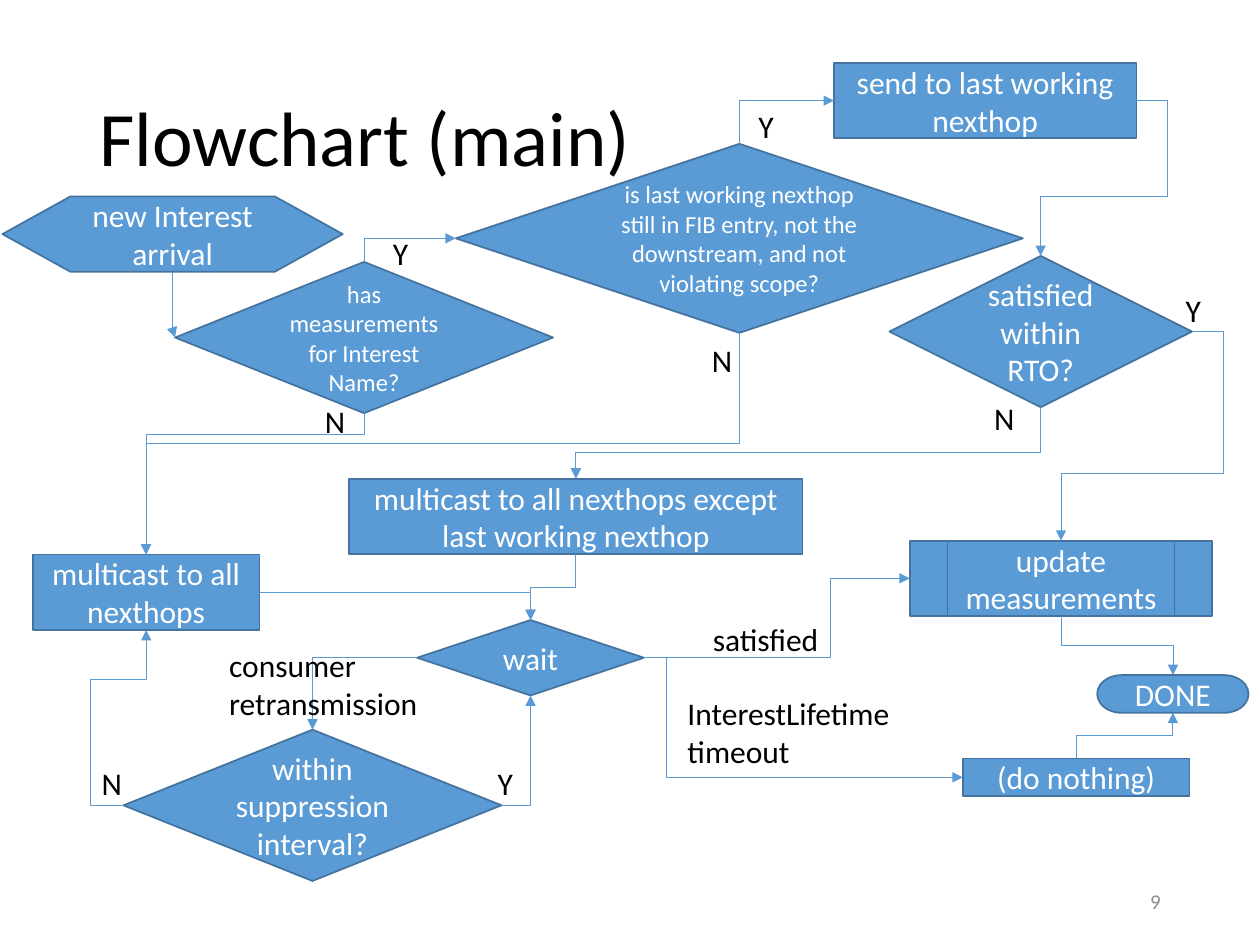
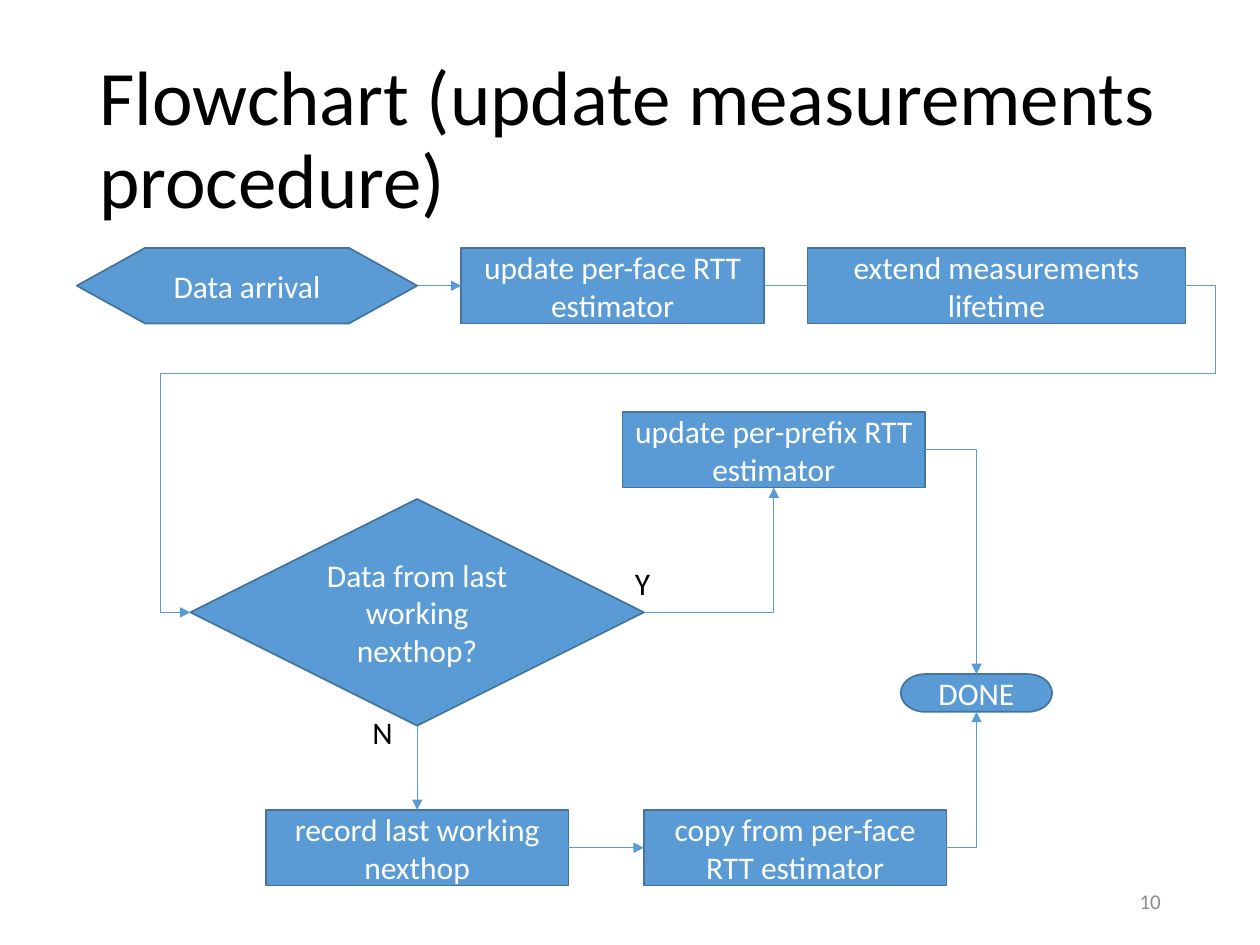
"""Build the two forwarding-strategy flowchart slides."""
from lxml.etree import SubElement
from pptx import Presentation
from pptx.dml.color import RGBColor
from pptx.enum.shapes import MSO_CONNECTOR, MSO_SHAPE
from pptx.enum.text import MSO_ANCHOR, MSO_AUTO_SIZE, PP_ALIGN
from pptx.oxml.ns import qn
from pptx.util import Cm, Pt

COLORS = {
    "node": "5B9BD5",
    "outline": "43739E",
    "node_text": "FFFFFF",
    "text": "000000",
    "page_number": "8C8C8C",
}
FONT = "Calibri"
TOP, LEFT, BOTTOM, RIGHT = range(4)
START = MSO_SHAPE.FLOWCHART_PREPARATION
DECISION = MSO_SHAPE.FLOWCHART_DECISION
PROCESS = MSO_SHAPE.FLOWCHART_PROCESS
PROCEDURE = MSO_SHAPE.FLOWCHART_PREDEFINED_PROCESS
END = MSO_SHAPE.FLOWCHART_TERMINATOR
ANSWER_WIDTHS = {"Y": 0.81, "N": 0.91}


def rgb(name):
    return RGBColor.from_string(COLORS[name])


def write(frame, text, size, color, align=PP_ALIGN.LEFT):
    frame.text = text
    paragraph = frame.paragraphs[0]
    paragraph.alignment = align
    for run in paragraph.runs:
        run.font.name = FONT
        run.font.size = Pt(size)
        run.font.color.rgb = rgb(color)
    return paragraph


def add_flow_slide(prs, title_text, number):
    slide = prs.slides.add_slide(prs.slide_layouts[5])
    title = slide.shapes.title
    title.left, title.top, title.width, title.height = Cm(1.75), Cm(1.02), Cm(21.9), Cm(3.68)
    title.text_frame.vertical_anchor = MSO_ANCHOR.MIDDLE
    title.text_frame.auto_size = MSO_AUTO_SIZE.NONE
    write(title.text_frame, title_text, 44, "text").line_spacing = 0.9

    page = slide.shapes.add_textbox(Cm(17.93), Cm(17.65), Cm(5.72), Cm(1.02))
    page.text_frame.word_wrap = True
    page.text_frame.vertical_anchor = MSO_ANCHOR.MIDDLE
    write(page.text_frame, str(number), 12, "page_number", PP_ALIGN.RIGHT)
    return slide


def add_node(slide, kind, text, left, top, width, height=1.52, size=18):
    node = slide.shapes.add_shape(kind, Cm(left), Cm(top), Cm(width), Cm(height))
    node.shadow.inherit = False
    node.fill.solid()
    node.fill.fore_color.rgb = rgb("node")
    node.line.color.rgb = rgb("outline")
    node.line.width = Pt(1)
    node.text_frame.vertical_anchor = MSO_ANCHOR.MIDDLE
    write(node.text_frame, text, size, "node_text", PP_ALIGN.CENTER)
    return node


def add_label(slide, text, left, top, width=None, wrap=False):
    label = slide.shapes.add_textbox(
        Cm(left), Cm(top), Cm(width or ANSWER_WIDTHS[text]), Cm(1.8 if wrap else 1.02))
    label.text_frame.word_wrap = wrap
    label.text_frame.auto_size = MSO_AUTO_SIZE.SHAPE_TO_FIT_TEXT
    write(label.text_frame, text, 18, "text")


def join(slide, kind, source, source_side, target, target_side, arrow=True):
    link = slide.shapes.add_connector(kind, Cm(0), Cm(0), Cm(1), Cm(1))
    link.begin_connect(source, source_side)
    link.end_connect(target, target_side)
    link.line.color.rgb = rgb("node")
    link.line.width = Pt(0.5)
    properties = link.element.spPr
    if arrow:
        SubElement(properties.find(qn("a:ln")), qn("a:tailEnd"), type="triangle")
    SubElement(properties, qn("a:effectLst"))
    return link


def add_straight(slide, source, source_side, target, target_side, arrow=True):
    join(slide, MSO_CONNECTOR.STRAIGHT, source, source_side, target, target_side, arrow)


def add_elbow(slide, source, source_side, target, target_side, *bends):
    """Join two nodes at right angles, with bends as fractions of the span."""
    link = join(slide, MSO_CONNECTOR.ELBOW, source, source_side, target, target_side)
    x1, y1, x2, y2 = link.begin_x, link.begin_y, link.end_x, link.end_y
    upright = source_side in (TOP, BOTTOM)
    along, across = (y2 - y1, x1 - x2) if upright else (x2 - x1, y2 - y1)
    flip_h, flip_v = along < 0, across < 0
    rotation = 90 if upright else 0
    if source_side == LEFT or (source_side == BOTTOM and x2 > x1):
        rotation += 180
        flip_h, flip_v = not flip_h, not flip_v

    link.width, link.height = abs(along), abs(across)
    link.left = (x1 + x2 - link.width) // 2
    link.top = (y1 + y2 - link.height) // 2
    link.rotation = rotation
    xfrm = link.element.spPr.find(qn("a:xfrm"))
    xfrm.set("flipH", str(int(flip_h)))
    xfrm.set("flipV", str(int(flip_v)))

    geometry = link.element.spPr.find(qn("a:prstGeom"))
    geometry.set("prst", f"bentConnector{len(bends) + 2}")
    guides = geometry.find(qn("a:avLst"))
    for index, bend in enumerate(bends, 1):
        name = "adj" if len(bends) == 1 else f"adj{index}"
        name = "adj1" if len(bends) == 1 else name
        SubElement(guides, qn("a:gd"), name=name, fmla=f"val {round(bend * 100000)}")


def build_main_flow(prs):
    slide = add_flow_slide(prs, "Flowchart (main)", 9)
    interest = add_node(slide, START, "new Interest arrival", 0.05, 3.96, 6.86)
    measured = add_node(slide, DECISION, "has measurements for Interest Name?",
                        3.53, 5.28, 7.62, 3.05, 14)
    multicast = add_node(slide, PROCESS, "multicast to all nexthops", 0.66, 11.18, 4.57)
    send = add_node(slide, PROCESS, "send to last working nexthop", 16.81, 1.27, 6.1)
    in_time = add_node(slide, DECISION, "satisfied within RTO?", 17.93, 5.16, 6.1, 3.05)
    multicast_rest = add_node(slide, PROCESS, "multicast to all nexthops except last working nexthop",
                              7.04, 9.65, 9.14)
    wait = add_node(slide, DECISION, "wait", 8.41, 12.5, 4.57)
    done = add_node(slide, END, "DONE", 22.12, 13.61, 3.05, 0.76)
    suppression = add_node(slide, DECISION, "within suppression interval?", 2.49, 14.71, 7.62, 3.05)
    nothing = add_node(slide, PROCESS, "(do nothing)", 19.41, 15.29, 4.57, 0.76)
    update = add_node(slide, PROCEDURE, "update measurements", 18.34, 10.9, 6.1)
    usable = add_node(
        slide, DECISION,
        "is last working nexthop still in FIB entry, not the downstream, and not violating scope?",
        9.19, 2.9, 11.43, 3.81, 14)

    for route in (
        (interest, BOTTOM, measured, LEFT),
        (measured, TOP, usable, LEFT),
        (measured, BOTTOM, multicast, TOP, 0.15),
        (usable, TOP, send, LEFT),
        (usable, BOTTOM, multicast, TOP, 0.5),
        (send, RIGHT, in_time, TOP, -0.33, 0.62),
        (in_time, BOTTOM, multicast_rest, TOP, 0.64),
        (in_time, RIGHT, update, TOP, -0.24, 0.68),
        (multicast_rest, BOTTOM, wait, TOP, 0.5),
        (multicast, RIGHT, wait, TOP),
        (wait, LEFT, suppression, TOP),
        (wait, RIGHT, update, LEFT, 0.7),
        (wait, RIGHT, nothing, LEFT, 0.07),
        (suppression, LEFT, multicast, BOTTOM, -1.45, 0.72),
        (suppression, RIGHT, wait, BOTTOM),
        (update, BOTTOM, done, TOP, 0.5),
        (nothing, TOP, done, BOTTOM, 0.5),
    ):
        add_elbow(slide, *route)

    for answer, left, top in (
        ("Y", 23.65, 5.74), ("N", 19.79, 7.92), ("N", 1.8, 15.27), ("Y", 9.78, 15.27),
        ("Y", 7.67, 4.6), ("N", 6.3, 7.98), ("Y", 15.04, 2.03), ("N", 14.1, 6.76),
    ):
        add_label(slide, answer, left, top)
    add_label(slide, "satisfied", 14.12, 12.37, 2.67)
    add_label(slide, "consumer retransmission", 4.37, 12.9, 4.67, True)
    add_label(slide, "InterestLifetime timeout", 13.61, 13.87, 5.16, True)


def build_update_flow(prs):
    slide = add_flow_slide(prs, "Flowchart (update measurements procedure)", 10)
    first_row, last_row = 5, 16.33
    arrival = add_node(slide, START, "Data arrival", 1.55, first_row, 6.86)
    per_face = add_node(slide, PROCESS, "update per-face RTT estimator", 9.3, first_row, 6.1)
    extend = add_node(slide, PROCESS, "extend measurements lifetime", 16.28, first_row, 7.62)
    from_last = add_node(slide, DECISION, "Data from last working nexthop?", 3.84, 10.06, 9.14, 4.57)
    per_prefix = add_node(slide, PROCESS, "update per-prefix RTT estimator", 12.55, 8.31, 6.1)
    record = add_node(slide, PROCESS, "record last working nexthop", 5.36, last_row, 6.1)
    copy_face = add_node(slide, PROCESS, "copy from per-face RTT estimator", 12.98, last_row, 6.1)
    done = add_node(slide, END, "DONE", 18.16, 13.59, 3.05, 0.76)

    add_straight(slide, arrival, RIGHT, per_face, LEFT)
    add_straight(slide, per_face, RIGHT, extend, LEFT, arrow=False)
    add_straight(slide, from_last, BOTTOM, record, TOP)
    add_straight(slide, record, RIGHT, copy_face, LEFT)
    add_elbow(slide, extend, RIGHT, from_last, LEFT, -0.03, 0.27, 1.03)
    add_elbow(slide, from_last, RIGHT, per_prefix, BOTTOM)
    add_elbow(slide, per_prefix, RIGHT, done, TOP)
    add_elbow(slide, copy_face, RIGHT, done, BOTTOM)
    add_label(slide, "Y", 12.55, 11.25)
    add_label(slide, "N", 7.26, 14.25)


def main():
    prs = Presentation()
    prs.slide_width, prs.slide_height = Cm(25.4), Cm(19.05)
    build_main_flow(prs)
    build_update_flow(prs)
    prs.save("out.pptx")


if __name__ == "__main__":
    main()
